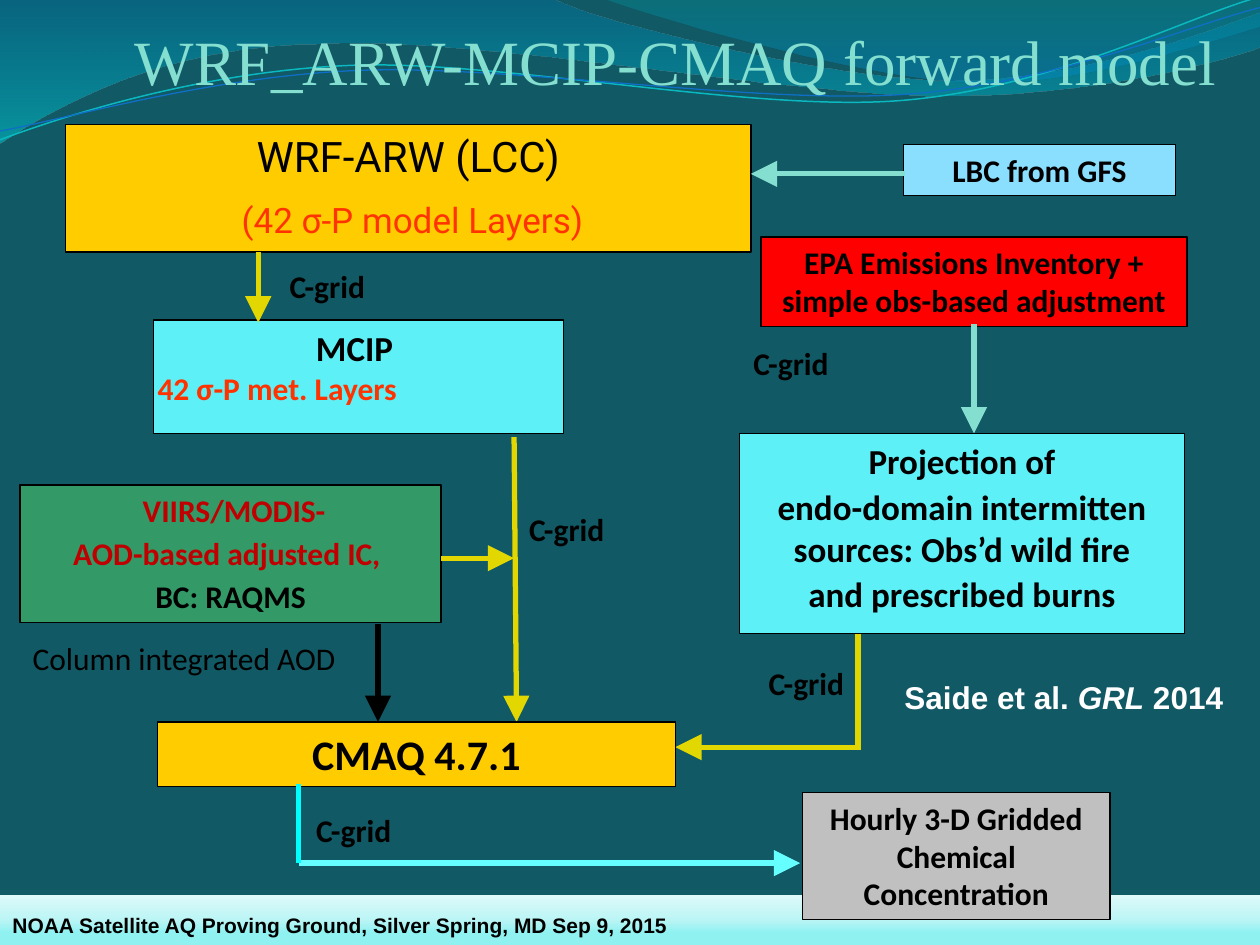
from dataclasses import dataclass
from lxml import etree
from pptx import Presentation
from pptx.dml.color import RGBColor
from pptx.enum.shapes import MSO_CONNECTOR, MSO_SHAPE
from pptx.enum.text import MSO_ANCHOR, MSO_AUTO_SIZE, PP_ALIGN
from pptx.oxml import parse_xml
from pptx.oxml.ns import nsdecls, qn
from pptx.util import Inches, Pt

RECTANGLE, STRAIGHT = MSO_SHAPE.RECTANGLE, MSO_CONNECTOR.STRAIGHT
TOP, CENTER, LEFT = MSO_ANCHOR.TOP, PP_ALIGN.CENTER, PP_ALIGN.LEFT
GROW, FIXED = MSO_AUTO_SIZE.SHAPE_TO_FIT_TEXT, MSO_AUTO_SIZE.NONE


@dataclass(frozen=True)
class Theme:
    background: str = "115964"
    black: str = "000000"
    white: str = "FFFFFF"
    mint: str = "85DFD0"
    gold: str = "FFCC00"
    yellow: str = "E2D700"
    cyan: str = "5EF0F7"
    sky: str = "8ADFFF"
    red: str = "FF0000"
    orange: str = "FF3300"
    dark_red: str = "C00000"
    green: str = "339966"
    gray: str = "C0C0C0"
    output_drop: str = "00FFFF"
    output_arrow: str = "66FFFF"
    title_size: int = 36
    model_size: int = 24
    stage_size: int = 20
    body_size: int = 18
    footer_size: int = 12


THEME = Theme()


def span(text, size=THEME.body_size, color=THEME.black, bold=True, name="Calibri", italic=False):
    return text, dict(size=Pt(size), bold=bold, name=name, italic=italic), color


def write(shape, paras, align=CENTER, gap=0, inset=(0.1, 0.05), wrap=True, fit=GROW):
    """Fill a shape with paragraphs, each a list of spans."""
    frame = shape.text_frame
    across, down = map(Inches, inset)
    settings = dict(word_wrap=wrap, auto_size=fit, vertical_anchor=TOP, margin_left=across,
                    margin_right=across, margin_top=down, margin_bottom=down)
    for key, value in settings.items():
        setattr(frame, key, value)
    for index, spans in enumerate(paras):
        para = frame.paragraphs[0] if index == 0 else frame.add_paragraph()
        para.alignment = align
        para.space_before = Pt(gap if index else 0)
        for text, formats, color in spans:
            run = para.add_run()
            run.text = text
            for key, value in formats.items():
                setattr(run.font, key, value)
            run.font.color.rgb = RGBColor.from_string(color)


@dataclass
class Region:
    """A part of the page whose contents are placed from its top left corner."""
    page: object
    left: float
    top: float

    def place(self, left, top):
        return Inches(self.left + left), Inches(self.top + top)

    def node(self, box, fill, paras, **options):
        left, top, width, height = box
        shape = self.page.shapes.add_shape(
            RECTANGLE, *self.place(left, top), Inches(width), Inches(height))
        shape.shadow.inherit = False
        shape.fill.solid()
        shape.fill.fore_color.rgb = RGBColor.from_string(fill)
        shape.line.color.rgb = RGBColor.from_string(THEME.black)
        shape.line.width = Pt(0.75)
        write(shape, paras, **options)

    def label(self, box, spans, **options):
        left, top, width, height = box
        shape = self.page.shapes.add_textbox(
            *self.place(left, top), Inches(width), Inches(height))
        write(shape, [spans], **{"align": LEFT, **options})

    def grid_label(self, left, top, width=0.92, **options):
        self.label((left, top, width, 0.4), [span("C-grid")], **options)

    def link(self, start, end, color, head=True):
        line = self.page.shapes.add_connector(STRAIGHT, *self.place(*start), *self.place(*end))
        line.line.color.rgb = RGBColor.from_string(color)
        line.line.width = Pt(3)
        properties = line._element.spPr
        if head:
            etree.SubElement(properties.find(qn("a:ln")), qn("a:tailEnd"),
                             type="triangle", w="lg", len="lg")
        etree.SubElement(properties, qn("a:effectLst"))


def fill_gradient(shape, stops, angle):
    """Stops are position, colour and opacity, in percent."""
    marks = "".join(
        f'<a:gs pos="{position * 1000}"><a:srgbClr val="{color}">'
        f'<a:alpha val="{opacity * 1000}"/></a:srgbClr></a:gs>'
        for position, color, opacity in stops)
    gradient = parse_xml(f'<a:gradFill {nsdecls("a")} rotWithShape="1"><a:gsLst>{marks}</a:gsLst>'
                         f'<a:lin ang="{angle * 60000}" scaled="0"/></a:gradFill>')
    shape.shadow.inherit = False
    shape.line.fill.background()
    shape.fill.background()
    properties = shape._element.spPr
    properties.replace(properties.find(qn("a:noFill")), gradient)


def outline(region, start, curves, close):
    """Join cubic curves; a one-point curve is a straight line."""
    builder = region.page.shapes.build_freeform(*region.place(*start))
    builder.add_line_segments([region.place(*curve[-1]) for curve in curves], close=close)
    shape = builder.convert_to_shape()
    shape.shadow.inherit = False
    segments = list(shape._element.iter(qn("a:lnTo")))
    for segment, curve in zip(segments, curves):
        if len(curve) == 1:
            continue
        bend = etree.Element(qn("a:cubicBezTo"))
        for point in curve:
            x, y = region.place(*point)
            etree.SubElement(bend, qn("a:pt"), x=str(x - shape.left), y=str(y - shape.top))
        segment.getparent().replace(segment, bend)
    return shape


def add_backdrop(region):
    # Footer band
    band = region.page.shapes.add_shape(
        RECTANGLE, *region.place(0, 7.1), Inches(10), Inches(0.4))
    fill_gradient(band, [(0, "90F1F1", 100), (25, "90F1F1", 100),
                         (50, "BCF5F5", 100), (100, "DFF9F9", 100)], 270)
    # Filled waves
    waves = [
        ((0, 0), [[(4.4, 0)], [(4.76, 0.18), (6.64, 0.64), (7.58, 0.64)],
                  [(8.53, 0.64), (9.58, 0.26), (10, 0.1)], [(10.01, 0.37)],
                  [(9.83, 0.45), (8.7, 0.77), (7.46, 0.76)],
                  [(6.22, 0.76), (3.82, 0.29), (2.57, 0.35)],
                  [(1.29, 0.36), (0.46, 0.84), (-0.01, 1.14)]],
         [(0, "0074A1", 45), (100, "00C6CF", 55)]),
        ((4.79, -0.01), [[(5.09, 0.11), (6.82, 0.62), (7.69, 0.65)],
                         [(8.56, 0.69), (9.61, 0.32), (10, 0.21)], [(10, 0)]],
         [(0, "00A1A9", 30), (80, "008BBF", 45)]),
    ]
    for start, curves, stops in waves:
        fill_gradient(outline(region, start, curves, True), stops, 90)
    # Thin wave lines
    strands = [
        ((0, 1.11), [[(0.48, 0.93), (1.58, 0.57), (2.77, 0.52)],
                     [(3.95, 0.47), (5.93, 0.89), (7.13, 0.8)],
                     [(8.33, 0.71), (9.38, 0.15), (9.98, -0.02)]], "0AB8BF", 0.85),
        ((0, 1.04), [[(0.47, 0.96), (1.64, 0.61), (2.83, 0.56)],
                     [(4.03, 0.51), (5.97, 0.83), (7.17, 0.75)],
                     [(8.36, 0.67), (9.41, 0.21), (10, 0.06)]], "0F6FC6", 0.75),
    ]
    for start, curves, color, width in strands:
        strand = outline(region, start, curves, False)
        strand.fill.background()
        strand.line.color.rgb = RGBColor.from_string(color)
        strand.line.width = Pt(width)


def add_title(region):
    region.label((0, 0, 9.48, 0.61),
                 [span("WRF_ARW-MCIP-CMAQ forward model", THEME.title_size, THEME.mint,
                       False, "Times New Roman")], align=CENTER, inset=(0, 0))


def add_meteorology(region):
    region.node((0, 0, 5.44, 1.01), THEME.gold, [
        [span("WRF-ARW (LCC)", THEME.model_size, bold=False, name="Roboto")],
        [span(" (42 σ-P model Layers)", THEME.stage_size, THEME.orange, False, "Roboto")],
    ], gap=10)
    region.node((0.7, 1.55, 3.25, 0.9), THEME.cyan, [[span("MCIP ", THEME.stage_size)]])
    region.label((0.73, 1.94, 3.19, 0.3),
                 [span("42 σ-P met. Layers", color=THEME.orange)], inset=(0, 0))
    region.link((1.53, 1.01), (1.53, 1.57), THEME.yellow)
    region.link((3.56, 2.48), (3.58, 4.74), THEME.yellow)
    region.grid_label(1.68, 1.08)
    region.grid_label(3.58, 3.01)


def add_emissions(region):
    region.node((1.3, 0, 2.16, 0.4), THEME.sky, [[span("LBC from GFS")]])
    region.link((1.31, 0.23), (0.09, 0.23), THEME.mint)
    region.node((0.17, 0.73, 3.38, 0.71), THEME.red,
                [[span("EPA Emissions Inventory + simple obs-based adjustment")]])
    region.link((1.86, 1.42), (1.86, 2.29), THEME.mint)
    region.grid_label(0.01, 1.53)
    lines = ["Projection of", "endo-domain intermitten sources: Obs’d wild fire",
             "and prescribed burns"]
    region.node((0, 2.29, 3.53, 1.59), THEME.cyan,
                [[span(line, THEME.stage_size)] for line in lines], gap=2, fit=FIXED)
    region.link((0.94, 3.88), (0.94, 4.79), THEME.yellow, head=False)
    region.link((0.96, 4.78), (-0.51, 4.78), THEME.yellow)
    region.grid_label(0.17, 4.07, 0.72, align=CENTER, inset=(0, 0.05))
    citation = [("Saide et al. ", False), ("GRL", True), (" 2014", False)]
    region.label((1.21, 4.18, 2.75, 0.4),
                 [span(text, color=THEME.white, name="Arial", italic=italic)
                  for text, italic in citation], wrap=False)


def add_aerosol_input(region):
    region.node((0, 0, 3.34, 1.09), THEME.green, [
        [span(" VIIRS/MODIS-", color=THEME.dark_red)],
        [span("AOD-based adjusted IC, ", color=THEME.dark_red)],
        [span("BC: RAQMS")],
    ], gap=3)
    region.label((0, 1.17, 2.91, 0.4), [span("Column integrated AOD", bold=False)])
    region.link((2.84, 1.1), (2.84, 1.88), THEME.black)
    region.link((3.34, 0.58), (3.92, 0.58), THEME.yellow)


def add_output(region):
    region.node((0, 0, 4.11, 0.51), THEME.gold, [[span("CMAQ 4.7.1", THEME.model_size)]])
    region.node((5.12, 0.56, 2.44, 1.01), THEME.gray,
                [[span("Hourly 3-D Gridded Chemical Concentration")]])
    region.link((1.12, 1.12), (5.1, 1.12), THEME.output_arrow)
    region.link((1.12, 0.49), (1.12, 1.12), THEME.output_drop, head=False)
    region.grid_label(1.16, 0.66)


def add_footer(region):
    region.label((0, 0, 5.42, 0.3),
                 [span("NOAA Satellite AQ Proving Ground, Silver Spring, MD Sep 9, 2015",
                       THEME.footer_size, name="Arial")], wrap=False)


def main():
    deck = Presentation()
    deck.slide_width, deck.slide_height = Inches(10), Inches(7.5)
    page = deck.slides.add_slide(deck.slide_layouts[6])
    page.background.fill.solid()
    page.background.fill.fore_color.rgb = RGBColor.from_string(THEME.background)
    regions = [(add_backdrop, 0, 0), (add_title, 0.62, 0.18), (add_meteorology, 0.52, 0.99),
               (add_emissions, 5.87, 1.15), (add_aerosol_input, 0.16, 3.85),
               (add_output, 1.25, 5.73), (add_footer, 0, 7.19)]
    for add_region, left, top in regions:
        add_region(Region(page, left, top))
    deck.save("out.pptx")


if __name__ == "__main__":
    main()
